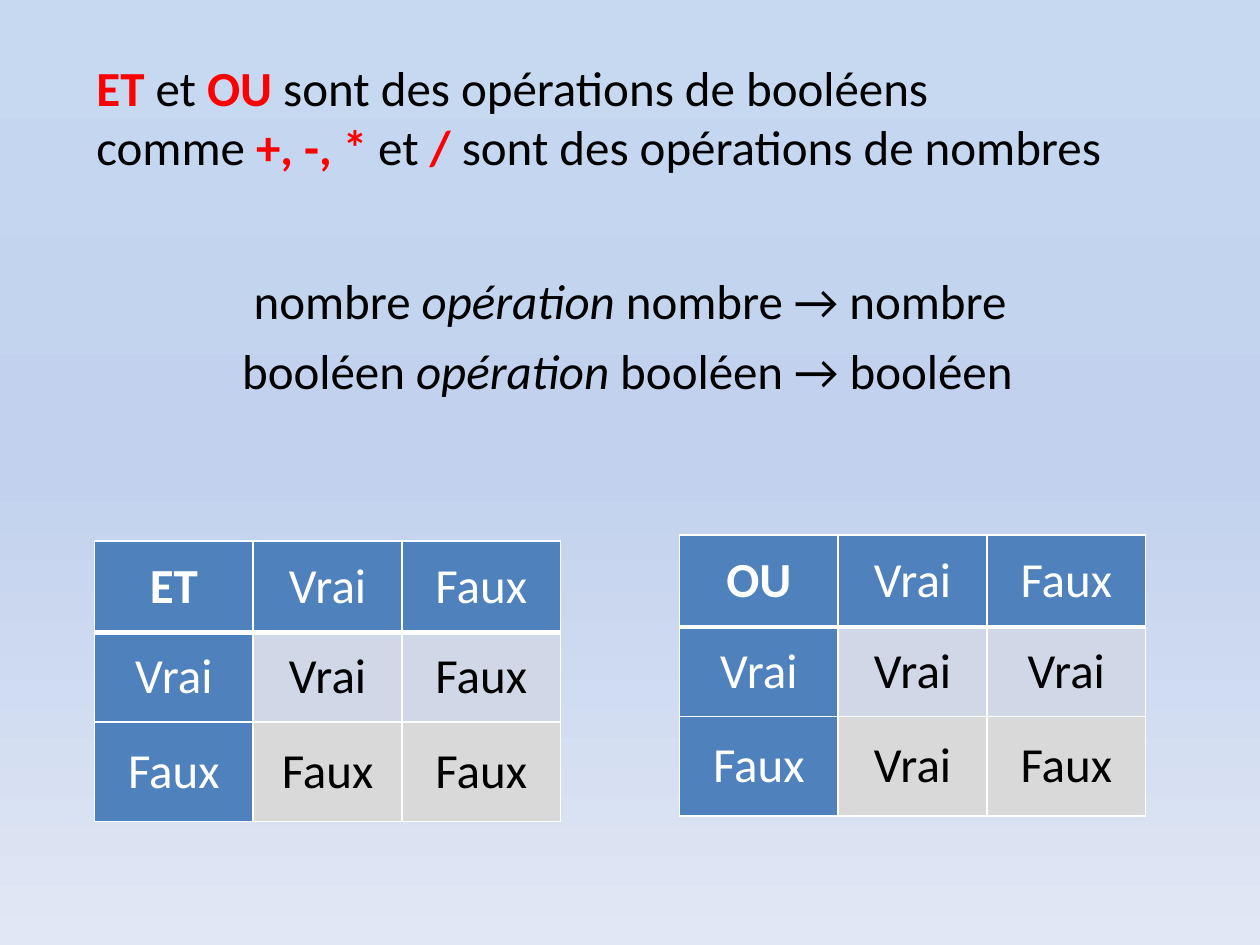
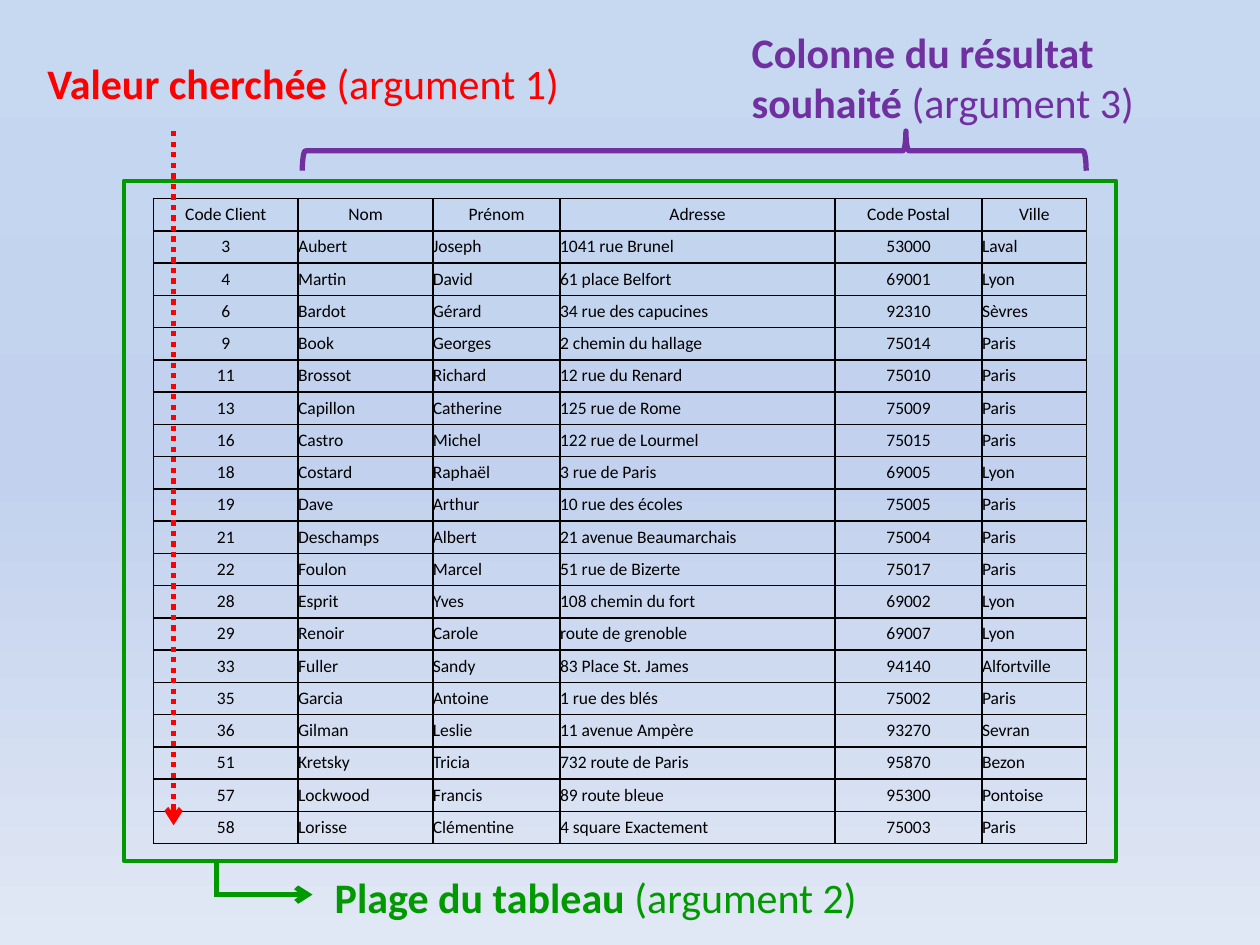
from copy import deepcopy

from lxml import etree
from pptx import Presentation
from pptx.dml.color import RGBColor
from pptx.enum import dml, shapes, text
from pptx.oxml import ns
from pptx.util import Pt

BLACK, WHITE, RED = "000000", "FFFFFF", "FF0000"
GREEN, PURPLE, BLUE = "009900", "7030A0", "4F81BD"
PALE_BLUE, PALE_GREY = "D0D8E8", "D9D9D9"
BACKDROP = [(0, "C6D9F1"), (0.5, "C2D1ED"), (1, "E1E8F5")]
LEFT, CENTER = text.PP_ALIGN.LEFT, text.PP_ALIGN.CENTER

CLIENT_HEADER = ("Code Client", "Nom", "Prénom", "Adresse", "Code Postal", "Ville")
CLIENTS = [
    ("3", "Aubert", "Joseph", "1041 rue Brunel", "53000", "Laval"),
    ("4", "Martin", "David", "61 place Belfort", "69001", "Lyon"),
    ("6", "Bardot", "Gérard", "34 rue des capucines", "92310", "Sèvres"),
    ("9", "Book", "Georges", "2 chemin du hallage", "75014", "Paris"),
    ("11", "Brossot", "Richard", "12 rue du Renard", "75010", "Paris"),
    ("13", "Capillon", "Catherine", "125 rue de Rome", "75009", "Paris"),
    ("16", "Castro", "Michel", "122 rue de Lourmel", "75015", "Paris"),
    ("18", "Costard", "Raphaël", "3 rue de Paris", "69005", "Lyon"),
    ("19", "Dave", "Arthur", "10 rue des écoles", "75005", "Paris"),
    ("21", "Deschamps", "Albert", "21 avenue Beaumarchais", "75004", "Paris"),
    ("22", "Foulon", "Marcel", "51 rue de Bizerte", "75017", "Paris"),
    ("28", "Esprit", "Yves", "108 chemin du fort", "69002", "Lyon"),
    ("29", "Renoir", "Carole", "route de grenoble", "69007", "Lyon"),
    ("33", "Fuller", "Sandy", "83 Place St. James", "94140", "Alfortville"),
    ("35", "Garcia", "Antoine", "1 rue des blés", "75002", "Paris"),
    ("36", "Gilman", "Leslie", "11 avenue Ampère", "93270", "Sevran"),
    ("51", "Kretsky", "Tricia", "732 route de Paris", "95870", "Bezon"),
    ("57", "Lockwood", "Francis", "89 route bleue", "95300", "Pontoise"),
    ("58", "Lorisse", "Clémentine", "4 square Exactement", "75003", "Paris"),
]


def color(value):
    return RGBColor.from_string(value)


class Painter:
    """Holds the shared style and the slide being filled."""

    font = "Calibri"

    def __init__(self, deck):
        self.deck = deck
        self.page = None

    def new_page(self):
        self.page = self.deck.slides.add_slide(self.deck.slide_layouts[6])
        fill = self.page.background.fill
        fill.gradient()
        fill.gradient_angle = 270
        stop_list = self.page.element.find(".//" + ns.qn("a:gsLst"))
        stop_list.append(deepcopy(stop_list[0]))
        for stop, (position, shade) in zip(fill.gradient_stops, BACKDROP):
            stop.position = position
            stop.color.rgb = color(shade)

    def add_spans(self, para, spans, size, align=LEFT, before=0, after=0):
        """Each span is (words, colour, style), with style among "", "b" and "i"."""
        para.alignment = align
        para.space_before, para.space_after = Pt(before), Pt(after)
        for words, shade, style in spans:
            if words == "\n":
                para.add_line_break()
                continue
            span = para.add_run()
            span.text = words
            span.font.name, span.font.size = self.font, Pt(size)
            span.font.color.rgb = color(shade)
            span.font.bold, span.font.italic = style == "b", style == "i"

    def text(self, left, top, width, height, paragraphs, size, wrap=True, **layout):
        box = self.page.shapes.add_textbox(Pt(left), Pt(top), Pt(width), Pt(height))
        frame = box.text_frame
        frame.word_wrap = wrap
        frame.auto_size = text.MSO_AUTO_SIZE.SHAPE_TO_FIT_TEXT
        for index, spans in enumerate(paragraphs):
            para = frame.add_paragraph() if index else frame.paragraphs[0]
            self.add_spans(para, spans, size, **layout)

    def outline(self, kind, left, top, width, height, shade, weight):
        shape = self.page.shapes.add_shape(kind, Pt(left), Pt(top), Pt(width), Pt(height))
        shape.shadow.inherit = False
        shape.fill.background()
        shape.line.color.rgb = color(shade)
        shape.line.width = Pt(weight)
        return shape

    def line(self, x1, y1, x2, y2, shade, dash=None, arrow=False):
        line = self.page.shapes.add_connector(
            shapes.MSO_CONNECTOR.STRAIGHT, Pt(x1), Pt(y1), Pt(x2), Pt(y2))
        line.line.color.rgb = color(shade)
        line.line.width = Pt(3)
        if dash:
            line.line.dash_style = dash
        properties = line._element.spPr
        if arrow:
            stroke = properties.find(ns.qn("a:ln"))
            etree.SubElement(stroke, ns.qn("a:tailEnd"), type="arrow")
        etree.SubElement(properties, ns.qn("a:effectLst"))

    def table(self, left, top, columns, heights):
        frame = self.page.shapes.add_table(
            len(heights), len(columns), Pt(left), Pt(top), Pt(sum(columns)), Pt(sum(heights)))
        table = frame.table
        table.first_row = table.horz_banding = False
        for column, width in zip(table.columns, columns):
            column.width = Pt(width)
        for row, height in zip(table.rows, heights):
            row.height = Pt(height)
        return table

    def cell(self, cell, span, size, border, fill=None, top=1, bottom=1, margin=None, **layout):
        cell.vertical_anchor = text.MSO_ANCHOR.MIDDLE
        if margin is not None:
            cell.margin_left = cell.margin_right = Pt(margin)
            cell.margin_top = cell.margin_bottom = Pt(margin)
        self.add_spans(cell.text_frame.paragraphs[0], [span], size, **layout)
        properties = cell._tc.get_or_add_tcPr()
        for side, weight in (("L", 1), ("R", 1), ("T", top), ("B", bottom)):
            edge = etree.SubElement(properties, ns.qn("a:ln" + side), w=str(int(Pt(weight))))
            paint = etree.SubElement(edge, ns.qn("a:solidFill"))
            etree.SubElement(paint, ns.qn("a:srgbClr"), val=border)
        if fill:
            cell.fill.solid()
            cell.fill.fore_color.rgb = color(fill)
        else:
            cell.fill.background()


def truth_table(painter, left, top, operator, results):
    values = ("Vrai", "Faux")
    rows = [(operator, *values)] + [(v, *r) for v, r in zip(values, results)]
    table = painter.table(left, top, (90.7, 85, 90.7), (52.5, 51, 57))
    for r, row in enumerate(rows):
        for c, word in enumerate(row):
            heading = r == 0 or c == 0
            span = (word, WHITE if heading else BLACK, "b" if r == c == 0 else "")
            painter.cell(
                table.cell(r, c), span, 28, WHITE,
                fill=BLUE if heading else (PALE_BLUE, PALE_GREY)[r - 1],
                top=3 if r == 1 else 1, bottom=3 if r == 0 else 1,
                align=CENTER, before=6, after=6)


def boolean_slide(painter):
    painter.new_page()

    # Statement
    painter.text(48, 29.5, 624, 75, [[
        ("ET ", RED, "b"), ("et ", BLACK, ""), ("OU ", RED, "b"),
        ("sont des opérations de booléens", BLACK, ""), ("\n", BLACK, ""),
        ("comme ", BLACK, ""), ("+, -, * ", RED, "b"), ("et", BLACK, ""),
        (" / ", RED, "b"), ("sont des opérations de nombres", BLACK, ""),
    ]], 28, after=18)

    # Typing rules of the operations
    for kind, left, top, width, wrap, after in (
            ("nombre", 48, 151.2, 624, True, 18),
            ("booléen", 127.5, 191, 462, False, 0)):
        rule = [(f"{kind} ", BLACK, ""), ("opération", BLACK, "i"),
                (f" {kind} → {kind}", BLACK, "")]
        painter.text(left, top, width, 41, [rule], 28, wrap, align=CENTER, after=after)

    # Truth tables
    truth_table(painter, 54, 309, "ET", [("Vrai", "Faux"), ("Faux", "Faux")])
    truth_table(painter, 388.3, 305.8, "OU", [("Vrai", "Vrai"), ("Vrai", "Faux")])


def lookup_slide(painter):
    painter.new_page()

    # Client table
    rows = [CLIENT_HEADER, *CLIENTS]
    table = painter.table(87.6, 113.5, (82.8, 77, 72.7, 157, 84.2, 59.6), [18.43] * len(rows))
    for r, row in enumerate(rows):
        for c, word in enumerate(row):
            centered = r == 0 or CLIENT_HEADER[c].startswith("Code")
            painter.cell(table.cell(r, c), (word, BLACK, ""), 10, BLACK, margin=0,
                         align=CENTER if centered else LEFT)

    # Argument 1: searched value
    painter.text(20, 29.5, 309.6, 36, [
        [("Valeur cherchée ", RED, "b"), ("(argument 1)", RED, "")]], 24, wrap=False)
    painter.line(99.2, 75, 99.2, 471.6, RED, dash=dml.MSO_LINE.ROUND_DOT, arrow=True)

    # Argument 2: table range
    painter.outline(shapes.MSO_SHAPE.RECTANGLE, 70.8, 103.2, 566.8, 388.8, GREEN, 2.25)
    painter.line(123.8, 511.2, 178.6, 511.2, GREEN, arrow=True)
    painter.line(123.8, 512.6, 123.8, 492.5, GREEN)
    painter.text(184.2, 494.6, 315.4, 36, [
        [("Plage du tableau ", GREEN, "b"), ("(argument 2)", GREEN, "")]], 24, wrap=False)

    # Argument 3: result column
    brace = painter.outline(
        shapes.MSO_SHAPE.RIGHT_BRACE, 385.4, -137.8, 22.7, 448, PURPLE, 3)
    brace.rotation = 270
    brace.adjustments[0], brace.adjustments[1] = 0.08, 0.77
    painter.text(422.4, 11.5, 235.4, 65.5, [
        [("Colonne du résultat", PURPLE, "b")],
        [("souhaité ", PURPLE, "b"), ("(argument 3)", PURPLE, "")]], 24)


def main():
    deck = Presentation()
    deck.slide_width, deck.slide_height = Pt(720), Pt(540)
    painter = Painter(deck)
    boolean_slide(painter)
    lookup_slide(painter)
    deck.save("out.pptx")


if __name__ == "__main__":
    main()
